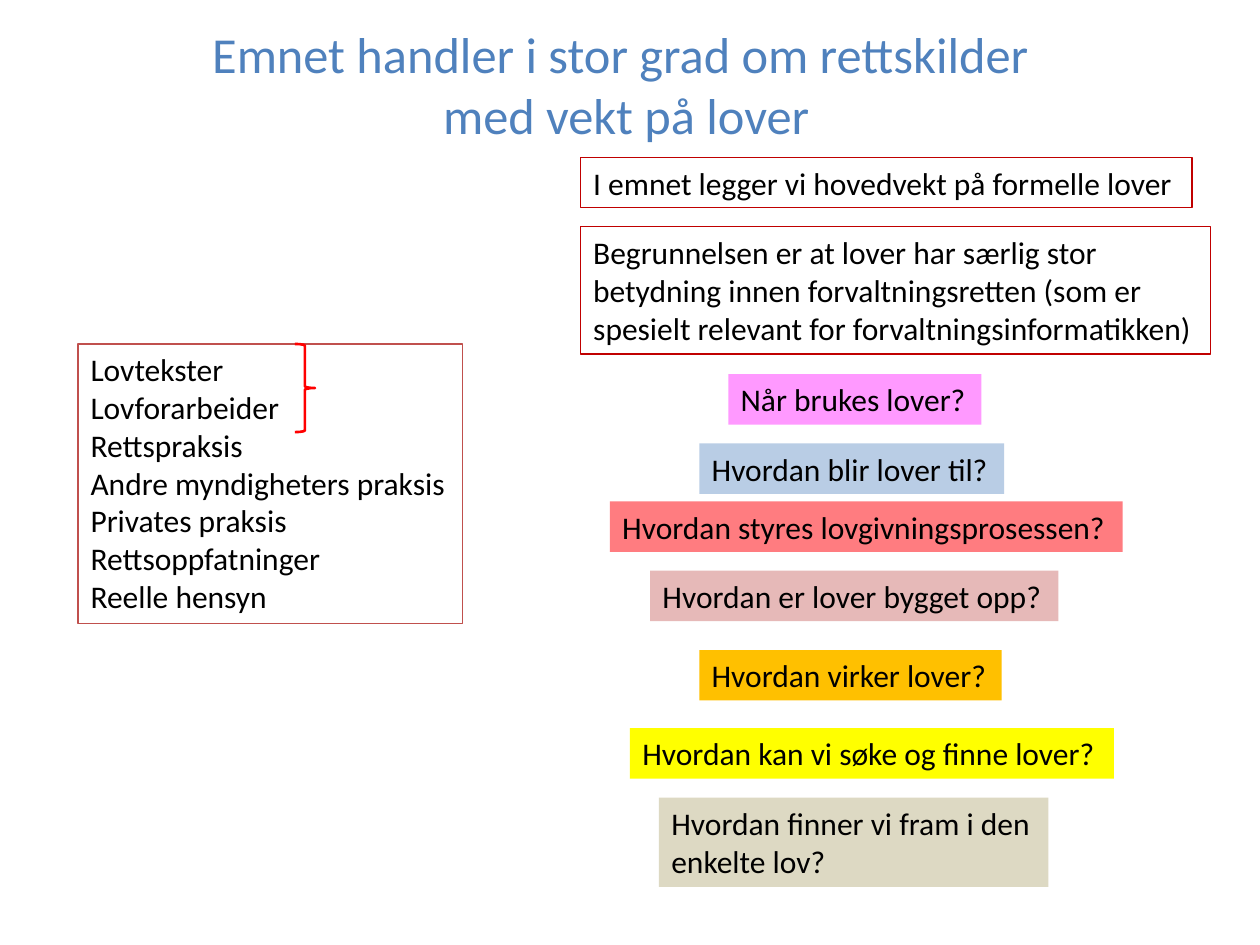
from pptx import Presentation
from pptx.dml.color import RGBColor
from pptx.enum.shapes import MSO_SHAPE as Shape
from pptx.enum.text import MSO_ANCHOR as Anchor, MSO_AUTO_SIZE as AutoSize, PP_ALIGN as Align
from pptx.util import Inches, Pt

FONT = "Calibri"
COLORS = {
    "title": "4F81BD",
    "text": "000000",
    "white": "FFFFFF",
    "reason_line": "C00000",
    "sources_line": "C0504D",
    "brace": "FF0000",
    "pink": "FF99FF",
    "blue": "B9CDE5",
    "coral": "FF7C80",
    "rose": "E6B9B8",
    "orange": "FFC000",
    "yellow": "FFFF00",
    "tan": "DDD9C3",
}

TITLE = ["Emnet handler i stor grad om rettskilder ", "med vekt på lover"]
LEGAL_SOURCES = [
    "Lovtekster",
    "Lovforarbeider",
    "Rettspraksis",
    "Andre myndigheters praksis",
    "Privates praksis",
    "Rettsoppfatninger",
    "Reelle hensyn",
]
FOCUS = ["I emnet legger vi hovedvekt på formelle lover"]
REASON = [
    "Begrunnelsen er at lover har særlig stor",
    "betydning innen forvaltningsretten (som er",
    "spesielt relevant for forvaltningsinformatikken)",
]
# left, top, width, height, fill, lines
QUESTIONS = [
    (5.78, 2.97, 2.01, 0.4, "pink", ["Når brukes lover?"]),
    (5.55, 3.52, 2.42, 0.4, "blue", ["Hvordan blir lover til?"]),
    (4.84, 3.98, 4.07, 0.4, "coral", ["Hvordan styres lovgivningsprosessen?"]),
    (5.16, 4.53, 3.24, 0.4, "rose", ["Hvordan er lover bygget opp?"]),
    (5.55, 5.16, 2.4, 0.4, "orange", ["Hvordan virker lover?"]),
    (5, 5.78, 3.84, 0.4, "yellow", ["Hvordan kan vi søke og finne lover?"]),
    (5.23, 6.33, 3.09, 0.71, "tan", ["Hvordan finner vi fram i den", "enkelte lov?"]),
]


def rgb(name):
    return RGBColor.from_string(COLORS[name])


def add_run(paragraph, text, size, color):
    run = paragraph.add_run()
    run.text = text
    run.font.name = FONT
    run.font.size = Pt(size)
    run.font.color.rgb = rgb(color)


def set_title(slide):
    title = slide.shapes.title
    title.left, title.top = Inches(0.47), Inches(0.23)
    title.width, title.height = Inches(9), Inches(0.87)
    frame = title.text_frame
    frame.vertical_anchor = Anchor.MIDDLE
    paragraph = frame.paragraphs[0]
    paragraph.alignment = Align.CENTER
    for index, line in enumerate(TITLE):
        if index:
            paragraph.add_line_break()
        add_run(paragraph, line, 28.8, "title")


def add_outline(slide, kind, bounds, fill=None, line=None, line_width=0.75):
    """Add a preset shape; a missing fill or line colour means none."""
    shape = slide.shapes.add_shape(kind, *map(Inches, bounds))
    shape.shadow.inherit = False
    if fill:
        shape.fill.solid()
        shape.fill.fore_color.rgb = rgb(fill)
    else:
        shape.fill.background()
    if line:
        shape.line.color.rgb = rgb(line)
        shape.line.width = Pt(line_width)
    else:
        shape.line.fill.background()
    return shape


def add_text_card(slide, bounds, lines, fill=None, line=None):
    """Add a rectangle with one left-aligned paragraph per line."""
    frame = add_outline(slide, Shape.RECTANGLE, bounds, fill, line).text_frame
    frame.word_wrap = False
    frame.auto_size = AutoSize.SHAPE_TO_FIT_TEXT
    frame.vertical_anchor = Anchor.TOP
    for index, text in enumerate(lines):
        paragraph = frame.add_paragraph() if index else frame.paragraphs[0]
        paragraph.alignment = Align.LEFT
        add_run(paragraph, text, 18, "text")


def main():
    prs = Presentation()
    prs.slide_width, prs.slide_height = Inches(10), Inches(7.5)
    slide = prs.slides.add_slide(prs.slide_layouts[5])

    set_title(slide)
    add_text_card(slide, (4.61, 1.25, 4.85, 0.4), FOCUS, "white", "reason_line")
    add_text_card(slide, (4.61, 1.8, 5, 1.01), REASON, "white", "reason_line")
    add_text_card(slide, (0.62, 2.73, 3.05, 2.22), LEGAL_SOURCES, line="sources_line")
    add_outline(slide, Shape.RIGHT_BRACE, (2.34, 2.73, 0.16, 0.7), line="brace", line_width=1.5)
    for *bounds, fill, lines in QUESTIONS:
        add_text_card(slide, bounds, lines, fill)

    prs.save("out.pptx")


if __name__ == "__main__":
    main()
